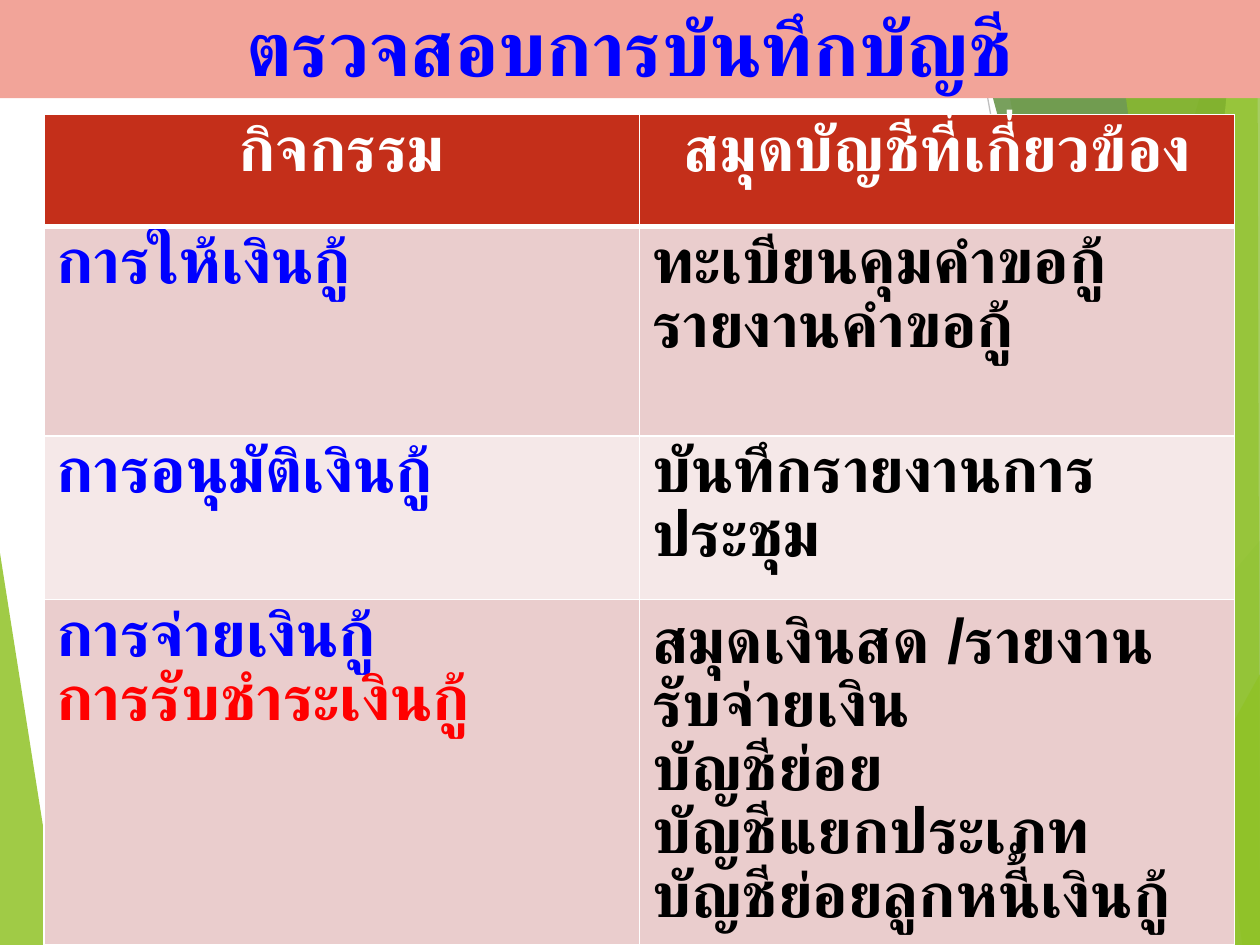
from dataclasses import dataclass

import pptx
import pptx.dml.color
import pptx.enum.shapes
import pptx.enum.text
import pptx.oxml
import pptx.oxml.ns
import pptx.util

Inches = pptx.util.Inches
Pt = pptx.util.Pt
RGBColor = pptx.dml.color.RGBColor
ALIGN = pptx.enum.text.PP_ALIGN
ANCHOR = pptx.enum.text.MSO_ANCHOR

FONT = "Arial"
WHITE = RGBColor(0xFF, 0xFF, 0xFF)
BLACK = RGBColor(0x00, 0x00, 0x00)
BLUE = RGBColor(0x00, 0x00, 0xFF)
RED = RGBColor(0xFF, 0x00, 0x00)
SALMON = RGBColor(0xF2, 0xA4, 0x99)
BRICK = RGBColor(0xC4, 0x2F, 0x1A)
ROSE = RGBColor(0xEA, 0xCD, 0xCD)
BLUSH = RGBColor(0xF5, 0xE8, 0xE8)
LIME = RGBColor(0x90, 0xC2, 0x26)
GREEN = RGBColor(0x54, 0xA0, 0x21)
FOREST = RGBColor(0x3F, 0x78, 0x19)
PALE_LIME = RGBColor(0xC0, 0xE4, 0x74)
LIGHT_GRAY = RGBColor(0xD9, 0xD9, 0xD9)
GRAY = RGBColor(0xBF, 0xBF, 0xBF)


@dataclass
class Facet:
    points: list
    color: RGBColor
    opacity: int


@dataclass
class Ray:
    start: tuple
    end: tuple
    color: RGBColor


@dataclass
class Line:
    text: str
    color: RGBColor


@dataclass
class Row:
    height: float
    fill: RGBColor
    cells: list
    align: ALIGN = ALIGN.LEFT
    bottom: float = 1
    margins: tuple = (0.05, 0.05)


BACKDROP = [
    Facet([(0, 4.39), (0.49, 7.5), (0, 7.5)], LIME, 85),
    Ray((5.61, 7.5), (10, 4.57), LIGHT_GRAY),
    Ray((7.7, 0), (9.04, 7.5), GRAY),
    Facet([(9.75, 0), (7.54, 7.5), (10, 7.5), (10, 0)], LIME, 30),
    Facet([(7.88, 0), (9.19, 7.5), (10, 7.5), (10, 0)], LIME, 20),
    Facet([(7.26, 7.5), (10, 4.29), (10, 7.5)], GREEN, 72),
    Facet([(7.67, 0), (9.7, 7.5), (10, 7.5), (10, 0)], FOREST, 70),
    Facet([(9.81, 0), (9.07, 7.5), (10, 7.5), (10, 0)], PALE_LIME, 70),
    Facet([(8.83, 0), (9.86, 7.5), (10, 7.5), (9.98, 0)], LIME, 65),
    Facet([(8.81, 7.5), (10, 5.35), (10, 7.5)], LIME, 80),
]

ROWS = [
    Row(0.89, BRICK, [[Line("กิจกรรม", WHITE)],
                      [Line("สมุดบัญชีที่เกี่ยวข้อง", WHITE)]], ALIGN.CENTER, 3),
    Row(1.66, ROSE, [[Line("การให้เงินกู้", BLUE)],
                     [Line("ทะเบียนคุมคำขอกู้", BLACK), Line("รายงานคำขอกู้", BLACK)]]),
    Row(1.3, BLUSH, [[Line("การอนุมัติเงินกู้", BLUE)],
                     [Line("บันทึกรายงานการประชุม", BLACK)]]),
    Row(2.74, ROSE, [[Line("การจ่ายเงินกู้", BLUE), Line("การรับชำระเงินกู้", RED)],
                     [Line("สมุดเงินสด /รายงานรับจ่ายเงิน", BLACK),
                      Line("บัญชีย่อย", BLACK),
                      Line("บัญชีแยกประเภท", BLACK),
                      Line("บัญชีย่อยลูกหนี้เงินกู้", BLACK)]], margins=(0.05, 0.1)),
]


def add_child(parent, tag: str, **values):
    child = pptx.oxml.parse_xml(f"<{tag} {pptx.oxml.ns.nsdecls('a')}/>")
    for name, value in values.items():
        child.set(name, str(value))
    parent.append(child)
    return child


def draw_facet(page, facet: Facet) -> None:
    points = [(Inches(x), Inches(y)) for x, y in facet.points]
    builder = page.shapes.build_freeform(*points[0])
    builder.add_line_segments(points[1:], close=True)
    shape = builder.convert_to_shape()
    shape.shadow.inherit = False
    shape.line.fill.background()
    shape.fill.solid()
    shape.fill.fore_color.rgb = facet.color
    color = shape._element.spPr.find(".//" + pptx.oxml.ns.qn("a:srgbClr"))
    add_child(color, "a:alpha", val=facet.opacity * 1000)


def draw_ray(page, ray: Ray) -> None:
    ends = [Inches(value) for value in ray.start + ray.end]
    connector = page.shapes.add_connector(pptx.enum.shapes.MSO_CONNECTOR.STRAIGHT, *ends)
    connector.line.color.rgb = ray.color
    connector.line.width = Pt(0.75)
    add_child(connector._element.spPr, "a:effectLst")


def write_lines(frame, lines: list, size: float, align: ALIGN, spacing: float = 1.0) -> None:
    frame.word_wrap = True
    for index, line in enumerate(lines):
        para = frame.add_paragraph() if index else frame.paragraphs[0]
        for name, value in {"alignment": align, "line_spacing": spacing}.items():
            setattr(para, name, value)
        span = para.add_run()
        span.text = line.text
        for name, value in {"size": Pt(size), "bold": True, "name": FONT}.items():
            setattr(span.font, name, value)
        span.font.color.rgb = line.color
        add_child(span.font._element, "a:cs", typeface=FONT)


def draw_title(page) -> None:
    box = page.shapes.add_shape(pptx.enum.shapes.MSO_SHAPE.RECTANGLE,
                                Inches(0), Inches(-0.06), Inches(10), Inches(0.84))
    box.shadow.inherit = False
    box.line.fill.background()
    box.fill.solid()
    box.fill.fore_color.rgb = SALMON
    box.text_frame.vertical_anchor = ANCHOR.MIDDLE
    write_lines(box.text_frame, [Line("ตรวจสอบการบันทึกบัญชี", BLUE)], 44, ALIGN.CENTER)


def draw_borders(cell, bottom: float) -> None:
    properties = cell._tc.get_or_add_tcPr()
    widths = {"a:lnL": 1, "a:lnR": 1, "a:lnT": 1, "a:lnB": bottom}
    for position, (tag, width) in enumerate(widths.items()):
        border = add_child(properties, tag, w=Pt(width))
        add_child(add_child(border, "a:solidFill"), "a:srgbClr", val=WHITE)
        properties.insert(position, border)


def draw_table(page, rows: list) -> None:
    height = sum(row.height for row in rows)
    table = page.shapes.add_table(len(rows), 2, Inches(0.35), Inches(0.91),
                                  Inches(9.45), Inches(height)).table
    for row_index, row in enumerate(rows):
        table.rows[row_index].height = Inches(row.height)
        for column_index, (lines, margin) in enumerate(zip(row.cells, row.margins)):
            cell = table.cell(row_index, column_index)
            cell.margin_top = Inches(margin)
            cell.fill.solid()
            cell.fill.fore_color.rgb = row.fill
            write_lines(cell.text_frame, lines, 36, row.align, 0.9)
            draw_borders(cell, row.bottom)


def main() -> None:
    deck = pptx.Presentation()
    for name, value in {"slide_width": Inches(10), "slide_height": Inches(7.5)}.items():
        setattr(deck, name, value)
    page = deck.slides.add_slide(deck.slide_layouts[6])
    for part in BACKDROP:
        if isinstance(part, Facet):
            draw_facet(page, part)
        else:
            draw_ray(page, part)
    draw_title(page)
    draw_table(page, ROWS)
    deck.save("out.pptx")


if __name__ == "__main__":
    main()
